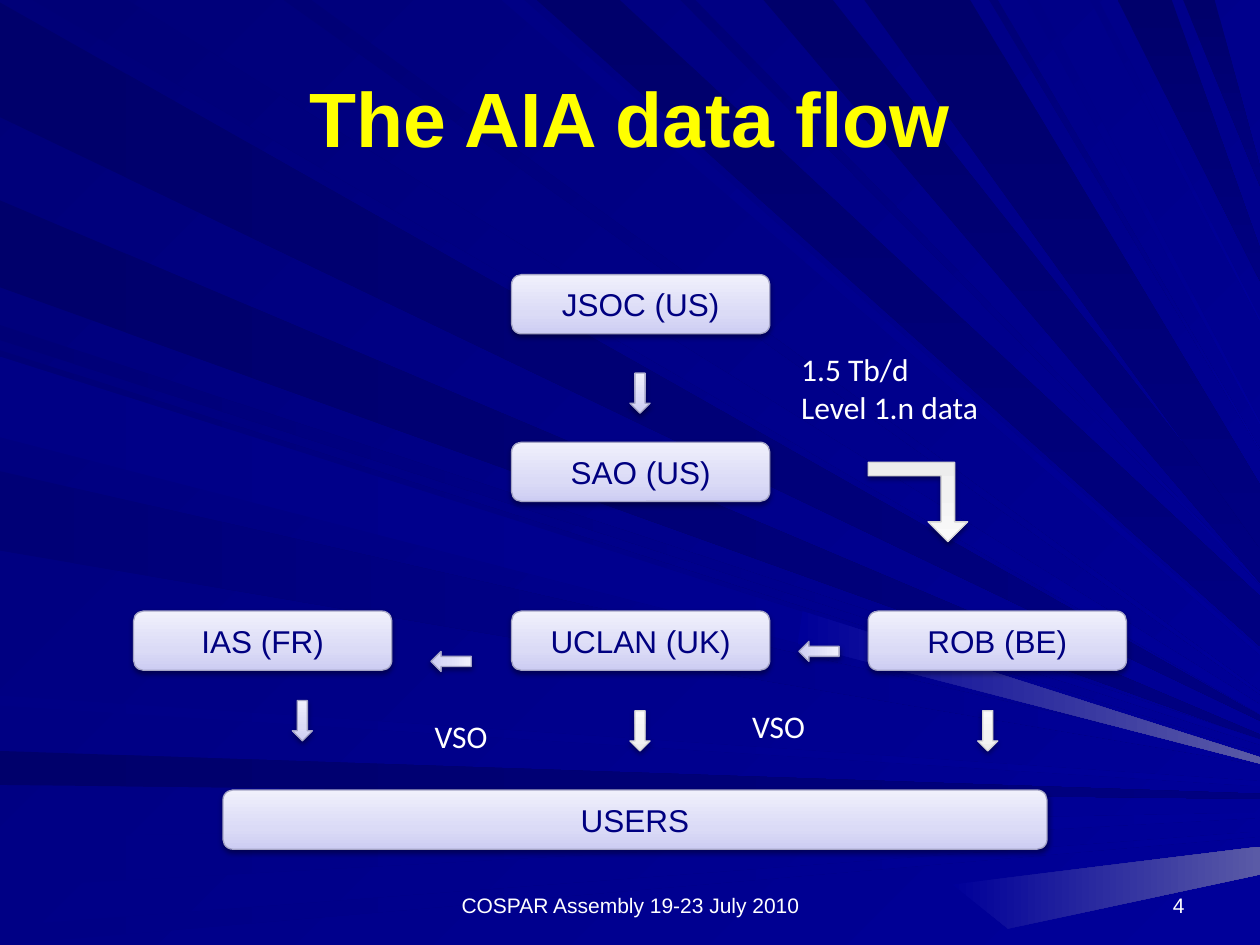
from lxml import etree
from pptx import Presentation
from pptx import util as u
from pptx.dml.color import RGBColor
from pptx.enum import shapes, text
from pptx.oxml import parse_xml
from pptx.oxml.ns import nsdecls, qn

THEME = {
    "font": "Arial", "label_font": "Calibri",
    "title": "FFFF00", "white": "FFFFFF", "navy": "000080",
    "title_size": 44, "body_size": 18, "footer_size": 12,
    "background": ("000078", "000099"),
    "deep": ("00006B", "000080"),
    "dark": ("000076", "000099"),
    "mid": ("000085", "000099"),
    "glint": ("000099", "5A5AA6"),
    "lilac": (("CDCDF3", "DBDBF6", "F0F0FC"), "A5A5C6"),
    "pale": (("EDEDED", "F2F2F2", "FAFAFA"), "D5D5D5"),
}
WIDTH, HEIGHT = 10, 7.5

TITLE = ("The AIA data flow", (0.5, 0.3, 9, 1.25))
BOX_W, BOX_H = 2.05, 0.47
LEFT, MIDDLE, RIGHT = 1.06, 4.06, 6.89
SITE_ROW = 4.85
BOXES = [
    ("JSOC (US)", MIDDLE, 2.18, BOX_W),
    ("SAO (US)", MIDDLE, 3.51, BOX_W),
    ("ROB (BE)", RIGHT, SITE_ROW, BOX_W),
    ("UCLAN (UK)", MIDDLE, SITE_ROW, BOX_W),
    ("IAS (FR)", LEFT, SITE_ROW, BOX_W),
    ("USERS", 1.77, 6.27, 6.54),
]
ARROW_W, ARROW_H = 0.16, 0.32
ARROWS = [
    (5, 2.96, 0, "lilac"),
    (6.42, 5.01, 90, "lilac"),
    (3.5, 5.09, 90, "lilac"),
    (2.32, 5.56, 0, "lilac"),
    (5, 5.64, 0, "pale"),
    (7.76, 5.64, 0, "pale"),
]
BENT_ARROW = (RIGHT, 3.67, 0.79, 0.63)
BENT_ADJUSTMENTS = (0.17, 0.25, 0.25)
LABELS = [
    ("1.5 Tb/d\nLevel 1.n data", (6.26, 2.73, 1.81, 0.7)),
    ("VSO", (3.35, 5.64, 1.18, 0.4)),
    ("VSO", (5.87, 5.56, 1.18, 0.4)),
]
FOOTERS = [
    ("COSPAR Assembly 19-23 July 2010", (3.42, 6.83, 3.17, 0.5), text.PP_ALIGN.CENTER),
    ("4", (7.17, 6.83, 2.33, 0.5), text.PP_ALIGN.RIGHT),
]

LEFT_RAYS = {
    "deep": [(0.02, 0.93, 5.7), (1.59, 2.28, 5.85), (5.96, 6.23, 6.32)],
    "dark": [(2.58, 2.7, 5.89), (2.78, 3.42, 6), (3.74, 4.37, 6.05)],
    "mid": [(2.83, 3.47, 6.03), (5.52, 5.6, 6.22), (6.65, 7.04, 6.47), (7.35, 7.5, 6.62)],
}
TOP_RAYS = {
    "dark": [(0.26, 1.01, 5.63), (2.25, 2.47, 5.5), (5.4, 5.52, 4.63), (7.85, 7.92, 3.57)],
    "deep": [(4.26, 4.92, 4.93), (6.06, 6.61, 4.46), (6.86, 7.7, 4.1),
             (8.87, 9.3, 2.1), (9.39, 9.64, 1.4)],
    "mid": [(3.98, 4.16, 5.18), (8.15, 8.24, 3.36), (8.65, 8.72, 2.54)],
}
TIP_SPREAD = {"deep": 0.3, "dark": 0.05, "mid": 0.1}
GLINTS = [
    [(6.33, 5.11), (6.37, 4.85), (10, 6.01), (10, 6.06)],
    [(7.56, 7.02), (8, 7.37), (10, 6.94), (10, 6.72)],
]


def inches(values):
    return [u.Inches(v) for v in values]


def paint(owner, fill, colors, angle):
    fill.solid()
    places = (0, 100) if len(colors) == 2 else (0, 35, 100)
    gs = "".join(f'<a:gs pos="{pos * 1000}"><a:srgbClr val="{c}"/></a:gs>'
                 for pos, c in zip(places, colors))
    grad = parse_xml(f'<a:gradFill {nsdecls("a")} rotWithShape="1"><a:gsLst>{gs}</a:gsLst>'
                     f'<a:lin ang="{angle * 60000}" scaled="0"/></a:gradFill>')
    solid = next(owner.iter(qn("a:solidFill")), None)
    if solid is None:
        fill.fore_color.rgb = RGBColor.from_string(colors[0])
        solid = next(owner.iter(qn("a:solidFill")))
    solid.getparent().replace(solid, grad)


def add_ray(s, points, shade, angle):
    start, *rest = [inches(point) for point in points]
    builder = s.shapes.build_freeform(*start)
    builder.add_line_segments(rest, close=True)
    sp = builder.convert_to_shape()
    paint(sp.element, sp.fill, THEME[shade], angle)
    sp.line.fill.background()
    sp.shadow.inherit = False


def add_rays(s):
    for shade, rays in LEFT_RAYS.items():
        for top, bottom, tip in rays:
            add_ray(s, [(0, top), (WIDTH, tip - 0.02), (WIDTH, tip + 0.02), (0, bottom)], shade, 0)
    for shade, rays in TOP_RAYS.items():
        for left, right, tip in rays:
            spread = TIP_SPREAD[shade] * (right - left)
            add_ray(s, [(left, 0), (WIDTH, tip + spread), (WIDTH, tip - spread), (right, 0)],
                    shade, 90 if shade == "deep" else 45)
    for points in GLINTS:
        add_ray(s, points, "glint", 0)


def write(sp, content, size, color, font, align, anchor, bold=False):
    tf = sp.text_frame
    tf.word_wrap = True
    tf.vertical_anchor = anchor
    tf.text = content
    for p in tf.paragraphs:
        p.alignment = align
        for r in p.runs:
            r.font.size, r.font.name, r.font.bold = u.Pt(size), font, bold
            r.font.color.rgb = RGBColor.from_string(color)


def add_raised(s, kind, at, style):
    sp = s.shapes.add_shape(kind, *inches(at))
    colors, line = THEME[style]
    paint(sp.element.spPr, sp.fill, colors, 270)
    sp.line.color.rgb = RGBColor.from_string(line)
    sp.line.width = u.Pt(0.75)
    sp.shadow.inherit = False
    shadow = etree.SubElement(sp.element.spPr.find(qn("a:effectLst")), qn("a:outerShdw"),
                              blurRad=str(u.Pt(3.1)), dist=str(u.Pt(1.6)),
                              dir="5400000", rotWithShape="0")
    color = etree.SubElement(shadow, qn("a:srgbClr"), val="000000")
    etree.SubElement(color, qn("a:alpha"), val="38000")
    return sp


def add_text(s, content, at, size, font, align, anchor):
    write(s.shapes.add_textbox(*inches(at)), content, size, THEME["white"], font, align, anchor)


def main():
    prs = Presentation()
    prs.slide_width, prs.slide_height = inches((WIDTH, HEIGHT))
    s = prs.slides.add_slide(prs.slide_layouts[5])
    paint(s.element, s.background.fill, THEME["background"], 45)
    add_rays(s)

    title = s.shapes.title
    title.left, title.top, title.width, title.height = inches(TITLE[1])
    center, middle = text.PP_ALIGN.CENTER, text.MSO_ANCHOR.MIDDLE
    write(title, TITLE[0], THEME["title_size"], THEME["title"], THEME["font"], center, middle, True)
    title.element.getparent().append(title.element)

    kinds = shapes.MSO_SHAPE
    for name, x, y, width in BOXES:
        sp = add_raised(s, kinds.ROUNDED_RECTANGLE, (x, y, width, BOX_H), "lilac")
        write(sp, name, THEME["body_size"], THEME["navy"], THEME["font"], center, middle)
    for x, y, rotation, style in ARROWS:
        add_raised(s, kinds.DOWN_ARROW, (x, y, ARROW_W, ARROW_H), style).rotation = rotation
    bent = add_raised(s, kinds.BENT_UP_ARROW, BENT_ARROW, "pale")
    bent.element.spPr.find(qn("a:xfrm")).set("flipV", "1")
    for i, value in enumerate(BENT_ADJUSTMENTS):
        bent.adjustments[i] = value

    for content, at in LABELS:
        add_text(s, content, at, THEME["body_size"], THEME["label_font"],
                 text.PP_ALIGN.LEFT, text.MSO_ANCHOR.TOP)
    for content, at, align in FOOTERS:
        add_text(s, content, at, THEME["footer_size"], THEME["font"], align, text.MSO_ANCHOR.BOTTOM)
    prs.save("out.pptx")


if __name__ == "__main__":
    main()
